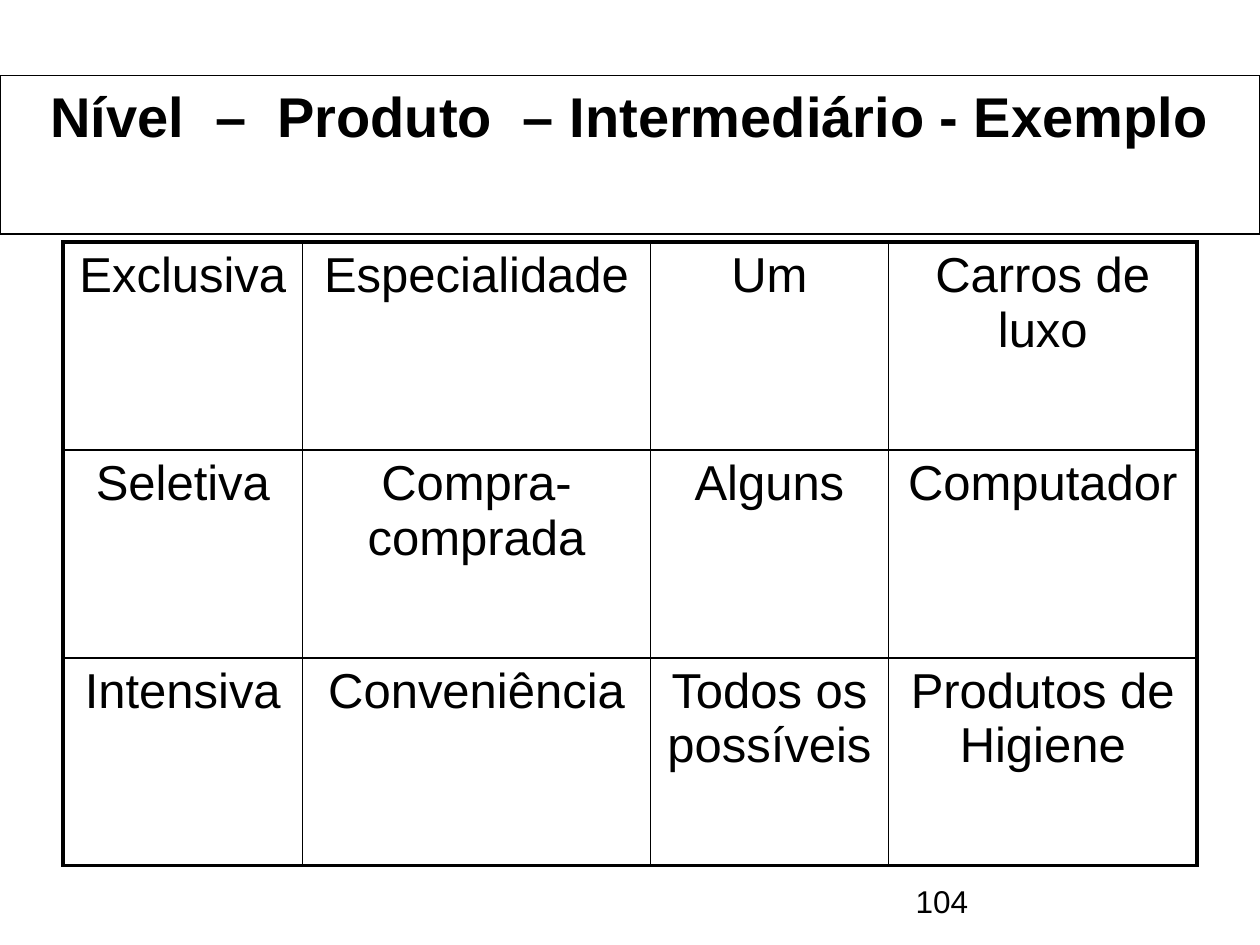
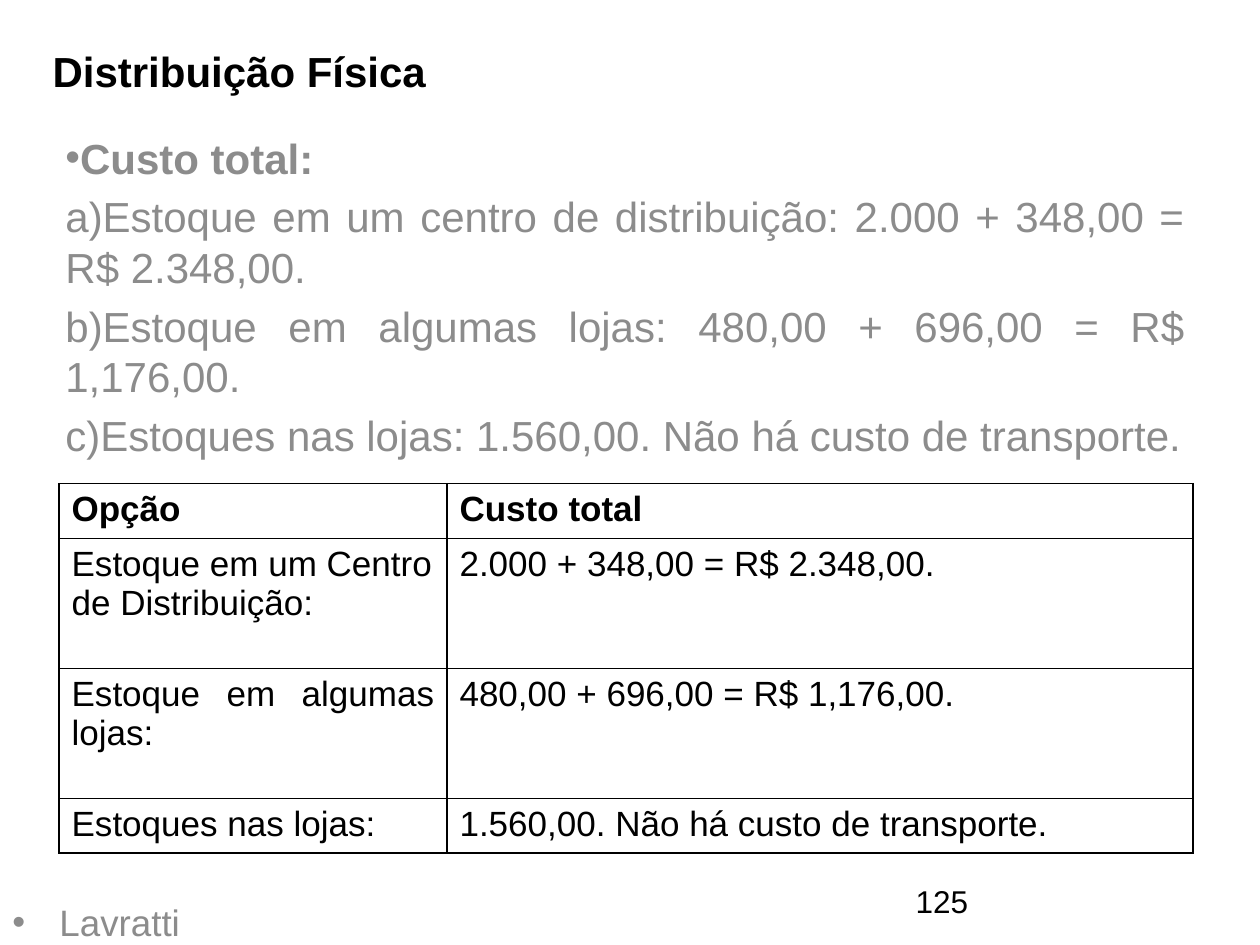
from dataclasses import dataclass

from lxml.etree import SubElement
from pptx import Presentation
from pptx.dml.color import RGBColor
from pptx.enum.shapes import MSO_SHAPE as Shape
from pptx.enum.text import MSO_ANCHOR as Anchor, PP_ALIGN as Align
from pptx.oxml.ns import qn
from pptx.util import Cm, Pt

# Content
LEVELS_TITLE = "Nível  –  Produto  – Intermediário - Exemplo"
LEVELS = [
    ("Exclusiva", "Especialidade", "Um", "Carros de luxo"),
    ("Seletiva", "Compra-comprada", "Alguns", "Computador"),
    ("Intensiva", "Conveniência", "Todos os possíveis", "Produtos de Higiene"),
]
LEVEL_WIDTHS = (4.83, 7.01, 4.8, 6.22)
LEVEL_HEIGHTS = (4.19, 4.19, 4.19)

COSTS_TITLE = "Distribuição Física"
COSTS_LEAD = "Custo total:"
COSTS_ITEMS = [
    "Estoque em um centro de distribuição: 2.000 + 348,00 = R$ 2.348,00.",
    "Estoque em algumas lojas: 480,00 + 696,00 = R$ 1,176,00.",
    "Estoques nas lojas: 1.560,00. Não há custo de transporte.",
]
COSTS = [
    ("Opção", "Custo total"),
    ("Estoque em um Centro de Distribuição:", "2.000 + 348,00 = R$ 2.348,00."),
    ("Estoque em algumas lojas:", "480,00 + 696,00 = R$ 1,176,00."),
    ("Estoques nas lojas:", "1.560,00. Não há custo de transporte."),
]
COST_WIDTHS = (7.82, 15.04)
COST_HEIGHTS = (1.03, 2.62, 2.62, 1.03)
AUTHOR = "Lavratti"


@dataclass(frozen=True)
class Theme:
    font: str = "Arial"
    ink: RGBColor = RGBColor(0, 0, 0)
    paper: RGBColor = RGBColor(255, 255, 255)
    muted: RGBColor = RGBColor(0x8C, 0x8C, 0x8C)
    banner: int = 32
    level: int = 28
    body: int = 24
    author: int = 21
    cost: int = 20
    number: int = 18
    thin: float = 1
    thick: float = 2.25


THEME = Theme()


# Text
def style(para, size, color=THEME.ink, bold=False, align=Align.LEFT):
    para.alignment = align
    for span in para.runs:
        font = span.font
        font.name, font.size, font.bold = THEME.font, Pt(size), bold
        font.color.rgb = color


def add_text(page, place, lines, size, color=THEME.ink, bold=False, wrap=True):
    box = page.shapes.add_textbox(*map(Cm, place))
    frame = box.text_frame
    frame.text = "\n".join(lines)
    frame.word_wrap = wrap
    for para in frame.paragraphs:
        style(para, size, color, bold)
    return frame


def add_bullet(para, tag="a:buChar", indent=0, **attributes):
    props = para._p.get_or_add_pPr()
    props.set("marL", str(Cm(indent)))
    props.set("indent", str(-Cm(indent)))
    SubElement(props, qn("a:buFont"), typeface=THEME.font)
    SubElement(props, qn(tag), **attributes)


def add_number(page, number):
    add_text(page, (18.21, 17.65, 5.92, 1.02), [number], THEME.number)


# Tables
def set_borders(cell, widths):
    props = cell._tc.get_or_add_tcPr()
    for side, width in zip(("lnL", "lnR", "lnT", "lnB"), widths):
        line = SubElement(props, qn(f"a:{side}"), w=str(Pt(width)))
        fill = SubElement(line, qn("a:solidFill"))
        SubElement(fill, qn("a:srgbClr"), val=str(THEME.ink))


def fill_half_clear(cell):
    cell.fill.solid()
    cell.fill.fore_color.rgb = THEME.paper
    color = cell._tc.tcPr.find(qn("a:solidFill")).find(qn("a:srgbClr"))
    SubElement(color, qn("a:alpha"), val="50000")


def add_grid(page, left, top, rows, widths, heights, size, outer):
    frame = page.shapes.add_table(len(rows), len(widths), Cm(left), Cm(top),
                                  Cm(sum(widths)), Cm(sum(heights)))
    table = frame.table
    table.first_row = table.horz_banding = False
    for column, width in zip(table.columns, widths):
        column.width = Cm(width)
    for row, height in zip(table.rows, heights):
        row.height = Cm(height)
    for r, texts in enumerate(rows):
        for c, text in enumerate(texts):
            cell = table.cell(r, c)
            edges = (c == 0, c == len(widths) - 1, r == 0, r == len(rows) - 1)
            set_borders(cell, [outer if edge else THEME.thin for edge in edges])
            cell.fill.background()
            cell.text_frame.text = text
            style(cell.text_frame.paragraphs[0], size)
    return table


# Slides
def build_levels(page):
    add_number(page, "104")

    banner = page.shapes.add_shape(Shape.RECTANGLE, 0, Cm(1.52), Cm(25.4), Cm(3.2))
    banner.shadow.inherit = False
    banner.fill.solid()
    banner.fill.fore_color.rgb = THEME.paper
    banner.line.color.rgb = THEME.ink
    banner.line.width = Pt(0.75)
    frame = banner.text_frame
    frame.text = LEVELS_TITLE
    frame.word_wrap = True
    frame.vertical_anchor = Anchor.TOP
    style(frame.paragraphs[0], THEME.banner, bold=True, align=Align.CENTER)

    table = add_grid(page, 1.27, 4.88, LEVELS, LEVEL_WIDTHS, LEVEL_HEIGHTS,
                     THEME.level, THEME.thick)
    for cell in table.iter_cells():
        cell.text_frame.paragraphs[0].alignment = Align.CENTER


def build_costs(page):
    add_number(page, "125")

    # Author line
    frame = add_text(page, (0, 18.21, 25.4, 0.84), [AUTHOR], THEME.author, THEME.muted)
    frame.vertical_anchor = Anchor.MIDDLE
    para = frame.paragraphs[0]
    add_bullet(para, indent=0.95, char="•")
    para.line_spacing = 0.9

    # Lettered cost list
    frame = add_text(page, (1.07, 2.54, 23.06, 14.81), [COSTS_LEAD, *COSTS_ITEMS],
                     THEME.body, THEME.muted)
    lead, *items = frame.paragraphs
    add_bullet(lead, char="•")
    lead.runs[0].font.bold = True
    for para in items:
        add_bullet(para, "a:buAutoNum", type="alphaLcParenR")
        para.space_before = Pt(THEME.body * 0.2)
    for para in frame.paragraphs:
        para.alignment = Align.JUSTIFY
        tabs = SubElement(para._p.pPr, qn("a:tabLst"))
        SubElement(tabs, qn("a:tab"), pos=str(Cm(0.71)), algn="l")

    # Cost table
    table = add_grid(page, 1.19, 9.75, COSTS, COST_WIDTHS, COST_HEIGHTS,
                     THEME.cost, THEME.thin)
    for cell in table.iter_cells():
        fill_half_clear(cell)
    for c in range(len(COST_WIDTHS)):
        table.cell(0, c).text_frame.paragraphs[0].runs[0].font.bold = True
    for r, c in ((1, 1), (2, 0), (2, 1), (3, 1)):
        table.cell(r, c).text_frame.paragraphs[0].alignment = Align.JUSTIFY

    add_text(page, (0.81, 0.79, 8.03, 1.27), [COSTS_TITLE], THEME.body,
             bold=True, wrap=False)


def main():
    deck = Presentation()
    deck.slide_width, deck.slide_height = Cm(25.4), Cm(19.05)
    for build in (build_levels, build_costs):
        build(deck.slides.add_slide(deck.slide_layouts[6]))
    deck.save("out.pptx")


if __name__ == "__main__":
    main()
